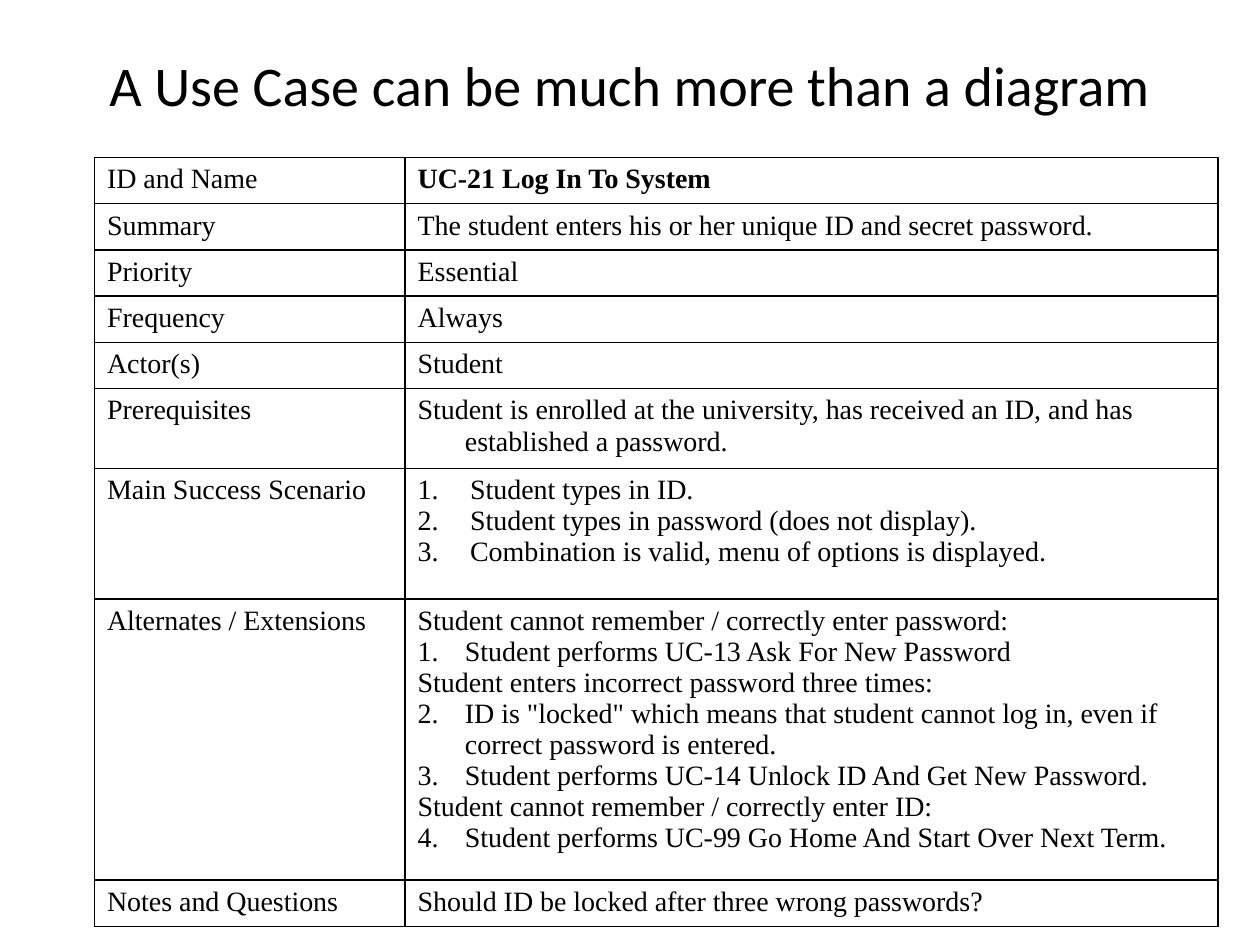
from lxml import etree
from pptx import Presentation
from pptx.dml.color import RGBColor
from pptx.enum.text import MSO_ANCHOR, PP_ALIGN
from pptx.oxml.ns import qn
from pptx.util import Pt

MIDDLE = MSO_ANCHOR.MIDDLE
CENTER = PP_ALIGN.CENTER

TITLE = "A Use Case can be much more than a diagram"
NUMBERED = "# "  # marks a paragraph that gets an automatic number
INK = "000000"

# Label, paragraphs, row height, hanging indent
USE_CASE = [
    ("ID and Name", ["UC-21 Log In To System"], 26.4, 27),
    ("Summary", ["The student enters his or her unique ID and secret password."], 26.4, 27),
    ("Priority", ["Essential"], 26.4, 27),
    ("Frequency", ["Always"], 26.4, 27),
    ("Actor(s)", ["Student"], 26.4, 27),
    ("Prerequisites", [
        "Student is enrolled at the university, has received an ID, and has established a password.",
    ], 45.5, 27),
    ("Main Success Scenario", [
        "# Student types in ID.",
        "# Student types in password (does not display).",
        "# Combination is valid, menu of options is displayed.",
    ], 74.5, 30),
    ("Alternates / Extensions", [
        "Student cannot remember / correctly enter password:",
        "# Student performs UC-13 Ask For New Password",
        "Student enters incorrect password three times:",
        '# ID is "locked" which means that student cannot log in, even if correct password is entered.',
        "# Student performs UC-14 Unlock ID And Get New Password.",
        "Student cannot remember / correctly enter ID:",
        "# Student performs UC-99 Go Home And Start Over Next Term.",
    ], 160.8, 27),
    ("Notes and Questions", ["Should ID be locked after three wrong passwords?"], 26.4, 27),
]
COLUMN_WIDTHS = (177.5, 464.5)

TITLE_FONT = {"name": "Calibri", "size": Pt(32), "bold": False}
CELL_FONT = {"name": "Times New Roman", "size": Pt(16), "bold": False}
HEADING_FONT = {**CELL_FONT, "bold": True}
CELL_MARGINS = {
    "margin_left": Pt(7.2), "margin_right": Pt(7.2),
    "margin_top": Pt(3.6), "margin_bottom": Pt(3.6),
}


def color(hex_code):
    return RGBColor.from_string(hex_code)


def set_attributes(target, values):
    for name, value in values.items():
        setattr(target, name, value)


def add_text(paragraph, text, font_values):
    run = paragraph.add_run()
    run.text = text
    set_attributes(run.font, font_values)
    run.font.color.rgb = color(INK)


def set_hanging_indent(paragraph, indent, numbered):
    properties = paragraph._p.get_or_add_pPr()
    properties.set("marL", str(Pt(indent)))
    properties.set("indent", str(-Pt(indent)))
    if numbered:
        etree.SubElement(properties, qn("a:buFont"), typeface="+mj-lt")
        etree.SubElement(properties, qn("a:buAutoNum"), type="arabicPeriod")
    else:
        etree.SubElement(properties, qn("a:buNone"))


def add_borders(cell):
    properties = cell._tc.get_or_add_tcPr()
    for side in ("a:lnL", "a:lnR", "a:lnT", "a:lnB"):
        line = etree.SubElement(properties, qn(side), w=str(Pt(1)))
        fill = etree.SubElement(line, qn("a:solidFill"))
        etree.SubElement(fill, qn("a:srgbClr"), val=INK)


def fill_cell(cell, lines, indent, font_values):
    set_attributes(cell, CELL_MARGINS)
    add_borders(cell)
    cell.fill.background()
    frame = cell.text_frame
    for index, line in enumerate(lines):
        paragraph = frame.add_paragraph() if index else frame.paragraphs[0]
        set_hanging_indent(paragraph, indent, line.startswith(NUMBERED))
        add_text(paragraph, line.removeprefix(NUMBERED), font_values)


def add_title(slide):
    frame = slide.shapes.add_textbox(Pt(54), Pt(24), Pt(612), Pt(48)).text_frame
    set_attributes(frame, {"word_wrap": True, "vertical_anchor": MIDDLE})
    frame.paragraphs[0].alignment = CENTER
    add_text(frame.paragraphs[0], TITLE, TITLE_FONT)


def add_use_case(slide):
    height = sum(row[2] for row in USE_CASE)
    table = slide.shapes.add_table(
        len(USE_CASE), len(COLUMN_WIDTHS),
        Pt(54), Pt(90), Pt(sum(COLUMN_WIDTHS)), Pt(height)).table
    set_attributes(table, {"first_row": False, "horz_banding": False})
    for column, width in zip(table.columns, COLUMN_WIDTHS):
        column.width = Pt(width)
    for index, (label, lines, row_height, indent) in enumerate(USE_CASE):
        table.rows[index].height = Pt(row_height)
        fill_cell(table.cell(index, 0), [label], 27, CELL_FONT)
        fill_cell(table.cell(index, 1), lines, indent,
                  CELL_FONT if index else HEADING_FONT)


def main():
    deck = Presentation()
    set_attributes(deck, {"slide_width": Pt(720), "slide_height": Pt(540)})
    slide = deck.slides.add_slide(deck.slide_layouts[6])
    add_title(slide)
    add_use_case(slide)
    deck.save("out.pptx")


if __name__ == "__main__":
    main()
